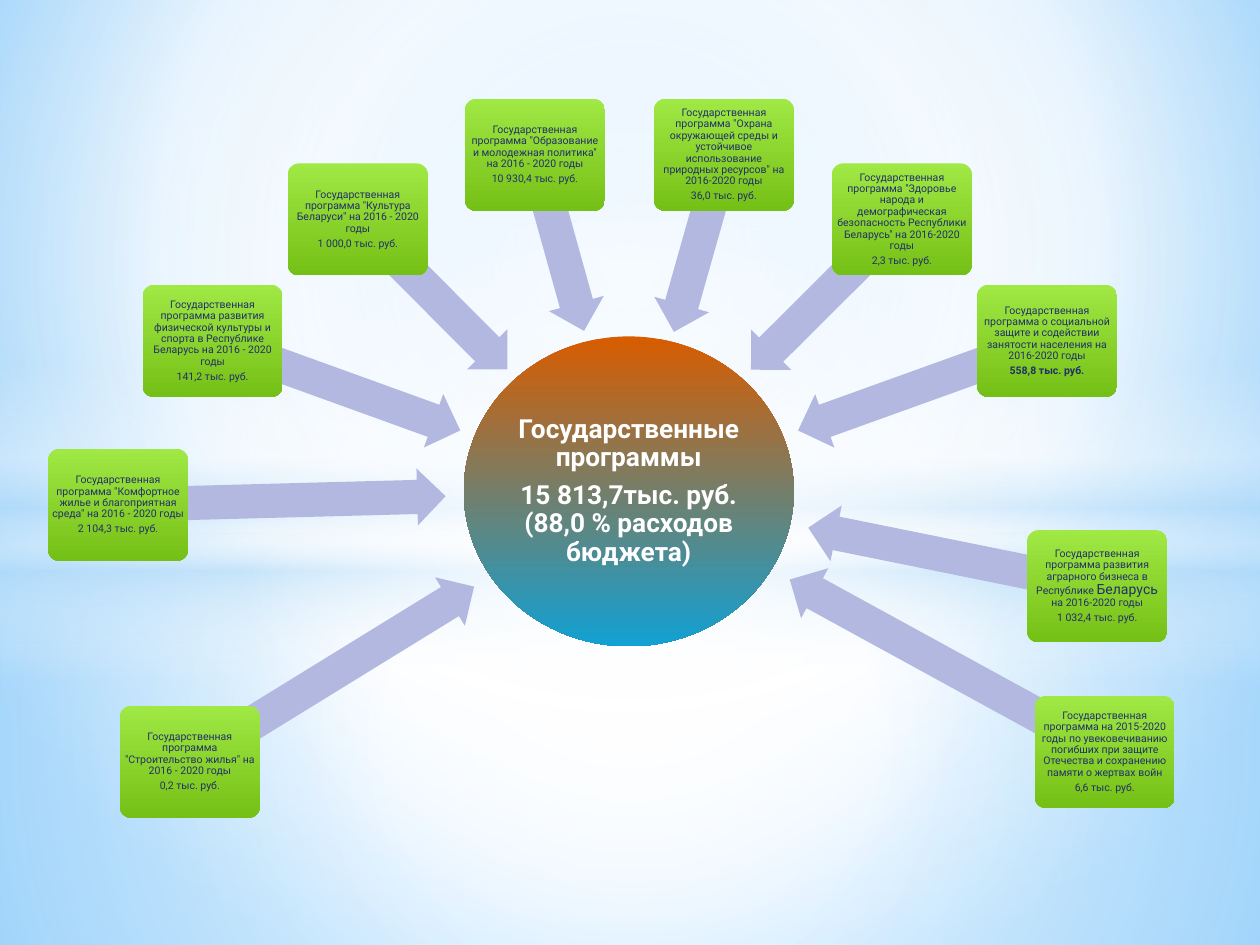
"""Build a slide of state programmes whose arrows converge on a central total."""
from dataclasses import dataclass
from math import atan2, cos, degrees, sin
from typing import NamedTuple

from lxml.etree import SubElement
from pptx import Presentation
from pptx.dml.color import RGBColor
from pptx.enum.shapes import MSO_SHAPE
from pptx.enum.text import MSO_ANCHOR, PP_ALIGN
from pptx.oxml import parse_xml
from pptx.oxml.ns import nsdecls, qn
from pptx.util import Pt

FONT = "Roboto"
WHITE = RGBColor(0xFF, 0xFF, 0xFF)
PALE_BLUE = RGBColor(0xB4, 0xDC, 0xFA)
SKY = RGBColor(0x9E, 0xD5, 0xFF)
DEEP_SKY = RGBColor(0x5B, 0xB9, 0xFF)
ORANGE = RGBColor(0xD8, 0x5C, 0x00)
CYAN = RGBColor(0x11, 0xA1, 0xD4)
LIME = RGBColor(0xA0, 0xE8, 0x44)
GREEN = RGBColor(0x75, 0xC0, 0x16)
LAVENDER = RGBColor(0xB2, 0xB8, 0xE0)
NAVY = RGBColor(0x21, 0x30, 0x6A)

SLIDE_WIDTH, SLIDE_HEIGHT = 720, 540
CARD_WIDTH, CARD_HEIGHT = 80, 64
HUB_WIDTH, HUB_HEIGHT = 188.6, 177.1
HUB_X, HUB_Y = 359.3, 280.8
ARROW_THICKNESS = 32.5
TEXT_INSET = 0.6


class Stop(NamedTuple):
    position: int
    color: RGBColor
    opacity: int = 100


@dataclass(frozen=True)
class Gradient:
    stops: tuple[Stop, ...]
    focus: tuple[int, int, int, int] | None = None


@dataclass(frozen=True)
class Layer:
    kind: MSO_SHAPE
    top: float
    height: float
    gradient: Gradient


@dataclass(frozen=True)
class Programme:
    x: float
    y: float
    reach: float
    title: str
    amount: str
    enlarged: str = ""
    bold_amount: bool = False


CENTRE = (50, 50, 50, 50)
BACKDROP = Gradient((Stop(0, SKY), Stop(60, WHITE), Stop(100, DEEP_SKY)), (20, 10, 20, 60))
HUB_FILL = Gradient((Stop(0, ORANGE), Stop(100, CYAN)))
CARD_FILL = Gradient((Stop(0, LIME), Stop(100, GREEN)))

LAYERS = (
    Layer(MSO_SHAPE.RECTANGLE, 304.6, 235.4, Gradient(
        (Stop(0, WHITE, 91), Stop(37, WHITE, 76), Stop(100, PALE_BLUE, 79)), CENTRE)),
    Layer(MSO_SHAPE.RECTANGLE, 0, 304.6, Gradient(
        (Stop(0, WHITE, 89), Stop(48, WHITE, 62), Stop(100, PALE_BLUE, 79)), CENTRE)),
    Layer(MSO_SHAPE.RECTANGLE, 208.8, 180, Gradient(
        (Stop(0, WHITE, 0), Stop(29, WHITE, 30), Stop(45, PALE_BLUE, 40),
         Stop(55, WHITE, 26), Stop(65, PALE_BLUE, 60), Stop(100, WHITE, 0)))),
    Layer(MSO_SHAPE.OVAL, 126, 401.8, Gradient((Stop(0, WHITE), Stop(54, WHITE, 0)), CENTRE)),
)

PROGRAMMES = (
    Programme(108.5, 435.3, 190.8,
              'Государственная программа "Строительство жилья" на 2016 - 2020 годы',
              "0,2 тыс. руб."),
    Programme(67.5, 288.5, 187.2,
              'Государственная программа "Комфортное жилье и благоприятная среда" '
              'на 2016 - 2020 годы', "2 104,3 тыс. руб."),
    Programme(121.5, 194.8, 150.5,
              "Государственная программа развития физической культуры и спорта "
              "в Республике Беларусь на 2016 - 2020 годы", "141,2 тыс. руб."),
    Programme(204.5, 125.4, 121,
              'Государственная программа "Культура Беларуси" на 2016 - 2020 годы',
              "1 000,0 тыс. руб."),
    Programme(305.7, 88.5, 104.4,
              'Государственная программа "Образование и молодежная политика" '
              'на 2016 - 2020 годы', "10 930,4 тыс. руб."),
    Programme(413.7, 88.5, 105.1,
              'Государственная программа "Охрана окружающей среды и устойчивое '
              'использование природных ресурсов" на 2016-2020 годы', "36,0 тыс. руб."),
    Programme(515.4, 125.4, 121.7,
              'Государственная программа "Здоровье народа и демографическая '
              'безопасность Республики Беларусь" на 2016-2020 годы', "2,3 тыс. руб."),
    Programme(598.3, 194.8, 151.2,
              "Государственная программа о социальной защите и содействии "
              "занятости населения на 2016-2020 годы", "558,8 тыс. руб.",
              bold_amount=True),
    Programme(627, 335, 168.5,
              "Государственная программа развития аграрного бизнеса "
              "в Республике Беларусь на 2016-2020 годы", "1 032,4 тыс. руб.",
              enlarged="Беларусь"),
    Programme(631.3, 429.7, 205.2,
              "Государственная программа на 2015-2020 годы по увековечиванию погибших "
              "при защите Отечества и сохранению памяти о жертвах войн", "6,6 тыс. руб."),
)


def paint_gradient(fill, owner, gradient: Gradient) -> None:
    fill.background()
    empty_fill = next(owner.iter(qn("a:noFill")))
    painted = parse_xml(f'<a:gradFill {nsdecls("a")} rotWithShape="1"/>')
    stop_list = SubElement(painted, qn("a:gsLst"))
    for stop in gradient.stops:
        mark = SubElement(stop_list, qn("a:gs"), pos=str(stop.position * 1000))
        color = SubElement(mark, qn("a:srgbClr"), val=str(stop.color))
        if stop.opacity < 100:
            SubElement(color, qn("a:alpha"), val=str(stop.opacity * 1000))
    if gradient.focus:
        circle = SubElement(painted, qn("a:path"), path="circle")
        sides = {side: str(share * 1000) for side, share in zip("ltrb", gradient.focus)}
        SubElement(circle, qn("a:fillToRect"), **sides)
    else:
        SubElement(painted, qn("a:lin"), ang="5400000", scaled="0")
    empty_fill.getparent().replace(empty_fill, painted)


def add_block(slide, kind: MSO_SHAPE, x: float, y: float, width: float, height: float,
              fill: Gradient | RGBColor):
    block = slide.shapes.add_shape(
        kind, Pt(x - width / 2), Pt(y - height / 2), Pt(width), Pt(height))
    block.shadow.inherit = False
    block.line.fill.background()
    if isinstance(fill, Gradient):
        paint_gradient(block.fill, block.element.spPr, fill)
    else:
        block.fill.solid()
        block.fill.fore_color.rgb = fill
    return block


def write_paragraph(frame, text: str, *, size: float, color: RGBColor,
                    bold: bool = False, enlarged: str = "") -> None:
    frame.word_wrap = True
    frame.vertical_anchor = MSO_ANCHOR.MIDDLE
    frame.margin_left = frame.margin_right = Pt(TEXT_INSET)
    frame.margin_top = frame.margin_bottom = Pt(TEXT_INSET)
    paragraph = frame.add_paragraph() if frame.text else frame.paragraphs[0]
    paragraph.alignment = PP_ALIGN.CENTER
    paragraph.line_spacing = 0.9
    paragraph.space_after = Pt(size * 0.35)
    for part in text.partition(enlarged) if enlarged else (text,):
        run = paragraph.add_run()
        run.text = part
        run.font.name = FONT
        run.font.size = Pt(size + 2 if part == enlarged else size)
        run.font.bold = bold
        run.font.color.rgb = color


def draw_programme(slide, programme: Programme) -> None:
    angle = atan2(programme.y - HUB_Y, programme.x - HUB_X)
    arrow = add_block(
        slide, MSO_SHAPE.LEFT_ARROW,
        programme.x - programme.reach / 2 * cos(angle),
        programme.y - programme.reach / 2 * sin(angle),
        programme.reach, ARROW_THICKNESS, LAVENDER)
    arrow.adjustments[0], arrow.adjustments[1] = 0.6, 0.5
    arrow.rotation = degrees(angle) % 360
    card = add_block(slide, MSO_SHAPE.ROUNDED_RECTANGLE, programme.x, programme.y,
                     CARD_WIDTH, CARD_HEIGHT, CARD_FILL)
    card.adjustments[0] = 0.1
    write_paragraph(card.text_frame, programme.title, size=6, color=NAVY,
                    enlarged=programme.enlarged)
    write_paragraph(card.text_frame, programme.amount, size=6, color=NAVY,
                    bold=programme.bold_amount)


def main() -> None:
    deck = Presentation()
    deck.slide_width, deck.slide_height = Pt(SLIDE_WIDTH), Pt(SLIDE_HEIGHT)
    slide = deck.slides.add_slide(deck.slide_layouts[6])
    paint_gradient(slide.background.fill, slide.element, BACKDROP)
    for layer in LAYERS:
        add_block(slide, layer.kind, SLIDE_WIDTH / 2, layer.top + layer.height / 2,
                  SLIDE_WIDTH, layer.height, layer.gradient)
    hub = add_block(slide, MSO_SHAPE.OVAL, HUB_X, HUB_Y, HUB_WIDTH, HUB_HEIGHT, HUB_FILL)
    for line in ("Государственные программы", "15 813,7тыс. руб. (88,0 % расходов бюджета)"):
        write_paragraph(hub.text_frame, line, size=15, color=WHITE, bold=True)
    for programme in PROGRAMMES:
        draw_programme(slide, programme)
    deck.save("out.pptx")


if __name__ == "__main__":
    main()
